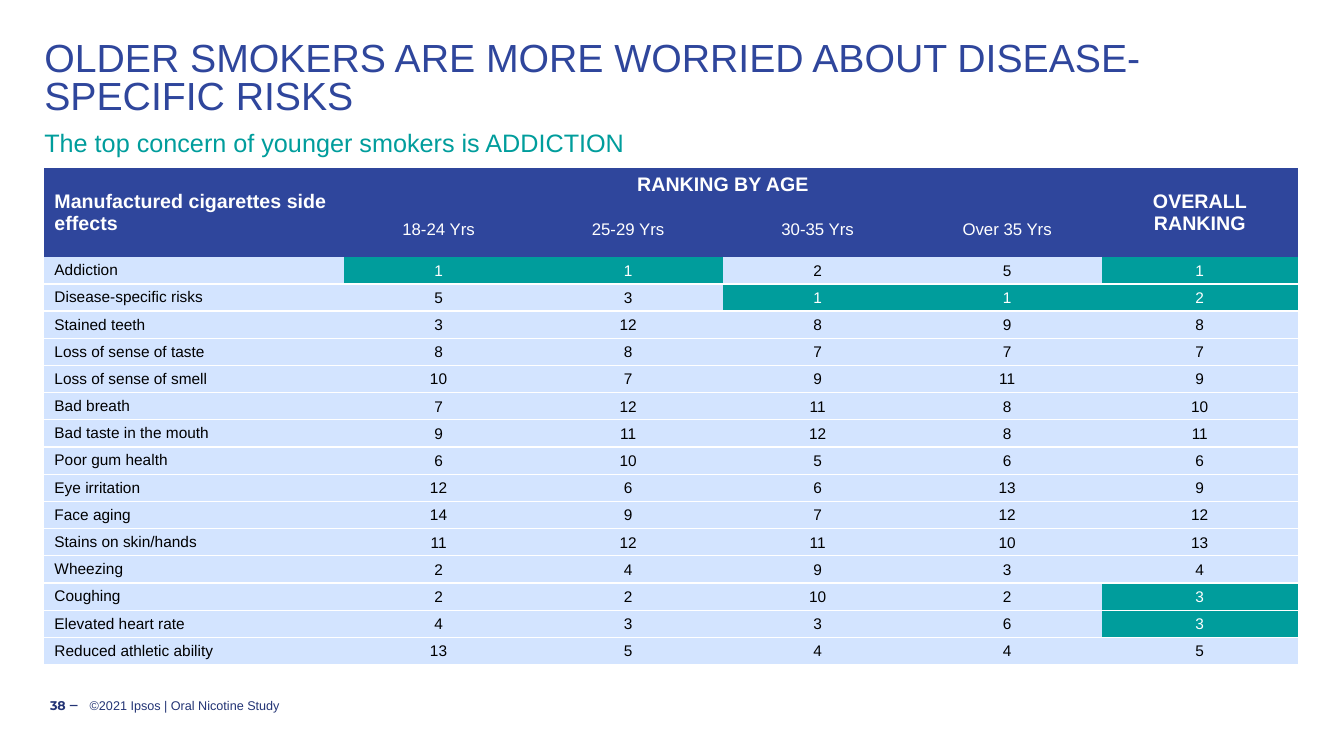
from dataclasses import dataclass

from lxml.etree import SubElement
from pptx import Presentation
from pptx.dml.color import RGBColor
from pptx.enum.text import MSO_ANCHOR as ANCHOR, PP_ALIGN as ALIGN
from pptx.oxml.ns import qn
from pptx.util import Inches, Pt


@dataclass(frozen=True)
class Theme:
    font: str = "Arial"
    number_font: str = "Montserrat"
    blue: str = "2F469C"
    navy: str = "233475"
    teal: str = "009D9C"
    pale: str = "D3E4FF"
    white: str = "FFFFFF"
    black: str = "000000"
    title: int = 28
    subtitle: int = 18
    heading: int = 14
    ages: int = 12
    body: int = 11
    footer: int = 9


T = Theme()
SLIDE_W, SLIDE_H = 13.33, 7.5
MARGIN = 0.44
CONTENT_W = SLIDE_W - 2 * MARGIN
NO_GRID_STYLE = "{2D5ABB26-0587-4C30-8999-92F81FD0307C}"

# Table grid, in inches
COLS = [2.97] + [1.88] * 4 + [1.94]
HEADER_ROWS = [0.33, 0.52]
BODY_ROW = 0.27
WIDE_INSETS = (0.1, 0.04, 0.1, 0.04)
TIGHT_INSETS = (0.01, 0.01, 0.01, 0)

AGES = ["18-24 Yrs", "25-29 Yrs", "30-35 Yrs", "Over 35 Yrs"]
# Side effect, then its rank in each age group and overall
RANKS = [
    ("Addiction", 1, 1, 2, 5, 1),
    ("Disease-specific risks", 5, 3, 1, 1, 2),
    ("Stained teeth", 3, 12, 8, 9, 8),
    ("Loss of sense of taste", 8, 8, 7, 7, 7),
    ("Loss of sense of smell", 10, 7, 9, 11, 9),
    ("Bad breath", 7, 12, 11, 8, 10),
    ("Bad taste in the mouth", 9, 11, 12, 8, 11),
    ("Poor gum health", 6, 10, 5, 6, 6),
    ("Eye irritation", 12, 6, 6, 13, 9),
    ("Face aging", 14, 9, 7, 12, 12),
    ("Stains on skin/hands", 11, 12, 11, 10, 13),
    ("Wheezing", 2, 4, 9, 3, 4),
    ("Coughing", 2, 2, 10, 2, 3),
    ("Elevated heart rate", 4, 3, 3, 6, 3),
    ("Reduced athletic ability", 13, 5, 4, 4, 5),
]


def write(tf, text, *, size, color, font=T.font, bold=False, align=ALIGN.LEFT, spacing=None):
    tf.word_wrap = True
    p = tf.paragraphs[0]
    p.alignment = align
    if spacing:
        p.line_spacing = spacing
    r = p.add_run()
    r.text = text
    r.font.name, r.font.size, r.font.bold = font, Pt(size), bold
    r.font.color.rgb = RGBColor.from_string(color)


def set_insets(target, insets):
    sides = ("margin_left", "margin_top", "margin_right", "margin_bottom")
    for side, inset in zip(sides, insets):
        setattr(target, side, Inches(inset))


def add_text(s, box, text, *, anchor=ANCHOR.TOP, insets=(0, 0, 0, 0), **fmt):
    tf = s.shapes.add_textbox(*map(Inches, box)).text_frame
    set_insets(tf, insets)
    tf.vertical_anchor = anchor
    write(tf, text, **fmt)


def fill_cell(cell, text, *, fill, insets=WIDE_INSETS, rules=(), **fmt):
    tcPr = cell._tc.get_or_add_tcPr()
    for rule in rules:
        ln = SubElement(tcPr, qn(f"a:{rule}"), w=str(Pt(1)))
        SubElement(SubElement(ln, qn("a:solidFill")), qn("a:srgbClr"), val=T.white)
    cell.fill.solid()
    cell.fill.fore_color.rgb = RGBColor.from_string(fill)
    set_insets(cell, insets)
    cell.vertical_anchor = ANCHOR.MIDDLE
    write(cell.text_frame, text, **fmt)


def add_heading(s, box):
    x, y, w, h = box
    add_text(s, (x, y, w, 0.65 * h), "OLDER SMOKERS ARE MORE WORRIED ABOUT DISEASE-SPECIFIC RISKS",
             size=T.title, color=T.blue, spacing=0.8)
    add_text(s, (x, y + 0.68 * h, w, 0.32 * h), "The top concern of younger smokers is ADDICTION",
             size=T.subtitle, color=T.teal)


def add_header(table):
    last = len(COLS) - 1
    table.cell(0, 0).merge(table.cell(1, 0))
    table.cell(0, 1).merge(table.cell(0, last - 1))
    table.cell(0, last).merge(table.cell(1, last))
    main = dict(fill=T.blue, size=T.heading, color=T.white, bold=True)
    fill_cell(table.cell(0, 0), "Manufactured cigarettes side effects",
              insets=(0.1, 0.01, 0.01, 0), **main)
    fill_cell(table.cell(0, 1), "RANKING BY AGE", align=ALIGN.CENTER, **main)
    fill_cell(table.cell(0, last), "OVERALL RANKING", align=ALIGN.CENTER, **main)
    for col, age in enumerate(AGES, 1):
        fill_cell(table.cell(1, col), age, fill=T.blue, size=T.ages, color=T.white,
                  align=ALIGN.CENTER)


def add_ranking_table(s, box):
    heights = HEADER_ROWS + [BODY_ROW] * len(RANKS)
    table = s.shapes.add_table(len(heights), len(COLS), *map(Inches, box)).table
    table.first_row = table.horz_banding = False
    table._tbl.tblPr.find(qn("a:tableStyleId")).text = NO_GRID_STYLE
    for col, width in zip(table.columns, COLS):
        col.width = Inches(width)
    for row, height in zip(table.rows, heights):
        row.height = Inches(height)
    add_header(table)

    # Body: the top rank by age and the top three overall stand out
    for i, (effect, *ranks) in enumerate(RANKS):
        row = i + len(HEADER_ROWS)
        rules = ("lnT", "lnB") if i else ("lnB",)
        fill_cell(table.cell(row, 0), effect, fill=T.pale, rules=rules,
                  size=T.body, color=T.black)
        for col, rank in enumerate(ranks, 1):
            top = rank <= (3 if col == len(ranks) else 1)
            fill_cell(table.cell(row, col), str(rank), fill=T.teal if top else T.pale,
                      insets=TIGHT_INSETS, rules=rules, size=T.body,
                      color=T.white if top else T.black, align=ALIGN.CENTER)


def add_footer(s, box):
    x, y, w, h = box
    number_w, gap = 0.39, 0.08
    fmt = dict(size=T.footer, color=T.navy, anchor=ANCHOR.MIDDLE, insets=(0, 0.05, 0, 0.05))
    add_text(s, (x, y, number_w, h), "38 ‒ ", font=T.number_font, bold=True,
             align=ALIGN.RIGHT, **fmt)
    add_text(s, (x + number_w + gap, y, w - number_w - gap, h),
             "©2021 Ipsos | Oral Nicotine Study", **fmt)


def main():
    prs = Presentation()
    prs.slide_width, prs.slide_height = Inches(SLIDE_W), Inches(SLIDE_H)
    s = prs.slides.add_slide(prs.slide_layouts[6])
    add_footer(s, (0.42, 6.8, 11.9, 0.4))
    add_ranking_table(s, (MARGIN, 1.67, sum(COLS), sum(HEADER_ROWS) + BODY_ROW * len(RANKS)))
    add_heading(s, (MARGIN, 0.42, CONTENT_W, 1.24))
    prs.save("out.pptx")


if __name__ == "__main__":
    main()
